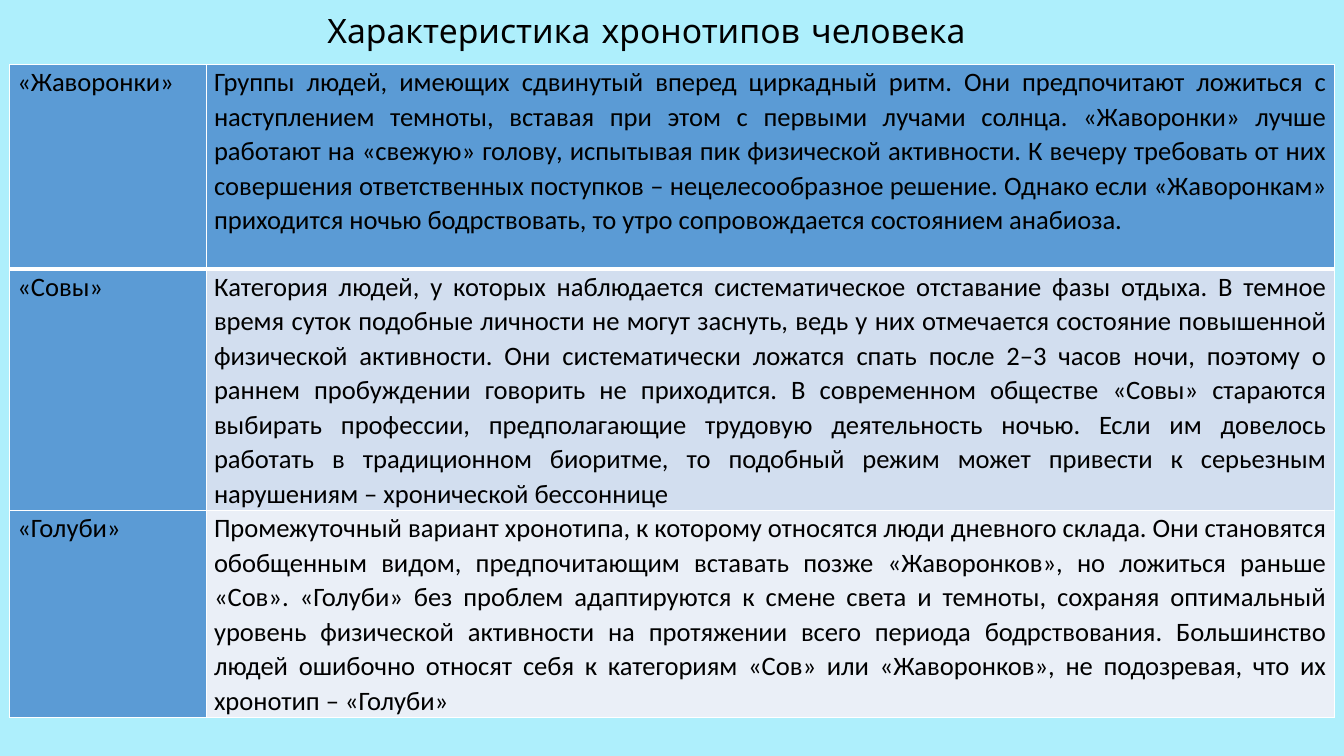
from lxml import etree
from pptx import Presentation
from pptx import util as u
from pptx.dml.color import RGBColor
from pptx.enum import text
from pptx.oxml import ns

ROWS = [
    ("«Жаворонки»", "Группы людей, имеющих сдвинутый вперед циркадный ритм. Они предпочитают ложиться с наступлением темноты, вставая при этом с первыми лучами солнца. «Жаворонки» лучше работают на «свежую» голову, испытывая пик физической активности. К вечеру требовать от них совершения ответственных поступков – нецелесообразное решение. Однако если «Жаворонкам» приходится ночью бодрствовать, то утро сопровождается состоянием анабиоза."),
    ("«Совы»", "Категория людей, у которых наблюдается систематическое отставание фазы отдыха. В темное время суток подобные личности не могут заснуть, ведь у них отмечается состояние повышенной физической активности. Они систематически ложатся спать после 2–3 часов ночи, поэтому о раннем пробуждении говорить не приходится. В современном обществе «Совы» стараются выбирать профессии, предполагающие трудовую деятельность ночью. Если им довелось работать в традиционном биоритме, то подобный режим может привести к серьезным нарушениям – хронической бессоннице"),
    ("«Голуби»", "Промежуточный вариант хронотипа, к которому относятся люди дневного склада. Они становятся обобщенным видом, предпочитающим вставать позже «Жаворонков», но ложиться раньше «Сов». «Голуби» без проблем адаптируются к смене света и темноты, сохраняя оптимальный уровень физической активности на протяжении всего периода бодрствования. Большинство людей ошибочно относят себя к категориям «Сов» или «Жаворонков», не подозревая, что их хронотип – «Голуби»"),
]
BLUE = "5B9BD5"
BANDS = [BLUE, "D2DEEF", "EAEFF7"]


def paint(fill, hue):
    fill.solid()
    fill.fore_color.rgb = RGBColor.from_string(hue)


def write(frame, words, font="Calibri", size=19, hue="000000", align="JUSTIFY", space=1.07):
    para = frame.paragraphs[0]
    para.alignment = getattr(text.PP_ALIGN, align)
    para.line_spacing = space
    run = para.add_run()
    run.text = words
    run.font.name, run.font.size, run.font.bold = font, u.Pt(size), False
    paint(run.font.fill, hue)


class Deck:
    """Holds the slide and its shared style."""

    def __init__(self, back, edge):
        self.show = Presentation()
        self.show.slide_width, self.show.slide_height = u.Pt(960), u.Pt(540)
        self.slide = self.show.slides.add_slide(self.show.slide_layouts[5])
        self.edge = edge
        paint(self.slide.background.fill, back)

    def title(self, words, *box):
        head = self.slide.shapes.title
        head.left, head.top, head.width, head.height = map(u.Pt, box)
        head.text_frame.vertical_anchor = text.MSO_ANCHOR.MIDDLE
        write(head.text_frame, words, "Comic Neue", 24, align="CENTER", space=0.9)

    def border(self, cell, **sides):
        props = cell._tc.get_or_add_tcPr()
        for spot, (side, width) in enumerate(sides.items()):
            line = etree.Element(ns.qn("a:ln" + side), w=str(u.Pt(width)))
            solid = etree.SubElement(line, ns.qn("a:solidFill"))
            etree.SubElement(solid, ns.qn("a:srgbClr"), val=self.edge)
            props.insert(spot, line)

    def table(self, rows, left, top, wides, highs):
        grid = self.slide.shapes.add_table(
            len(rows), len(wides), u.Pt(left), u.Pt(top), u.Pt(sum(wides)), u.Pt(sum(highs))).table
        grid.first_row = False
        for col, wide in zip(grid.columns, wides):
            col.width = u.Pt(wide)
        for r, row in enumerate(rows):
            grid.rows[r].height = u.Pt(highs[r])
            for c, words in enumerate(row):
                cell = grid.cell(r, c)
                cell.margin_left = cell.margin_right = u.Pt(5.4)
                cell.margin_top = cell.margin_bottom = 0
                paint(cell.fill, BANDS[r] if c else BLUE)
                self.border(cell, L=1, R=1, T=3 if r == 1 else 1, B=3 if r == 0 else 1)
                write(cell.text_frame, words)


def main():
    deck = Deck("AEEFFC", "FFFFFF")
    deck.title("Характеристика хронотипов человека", 183.6, 0, 556.6, 46)
    deck.table(ROWS, 7, 46, [140.5, 805.5], [146, 156, 134])
    deck.show.save("out.pptx")


if __name__ == "__main__":
    main()
